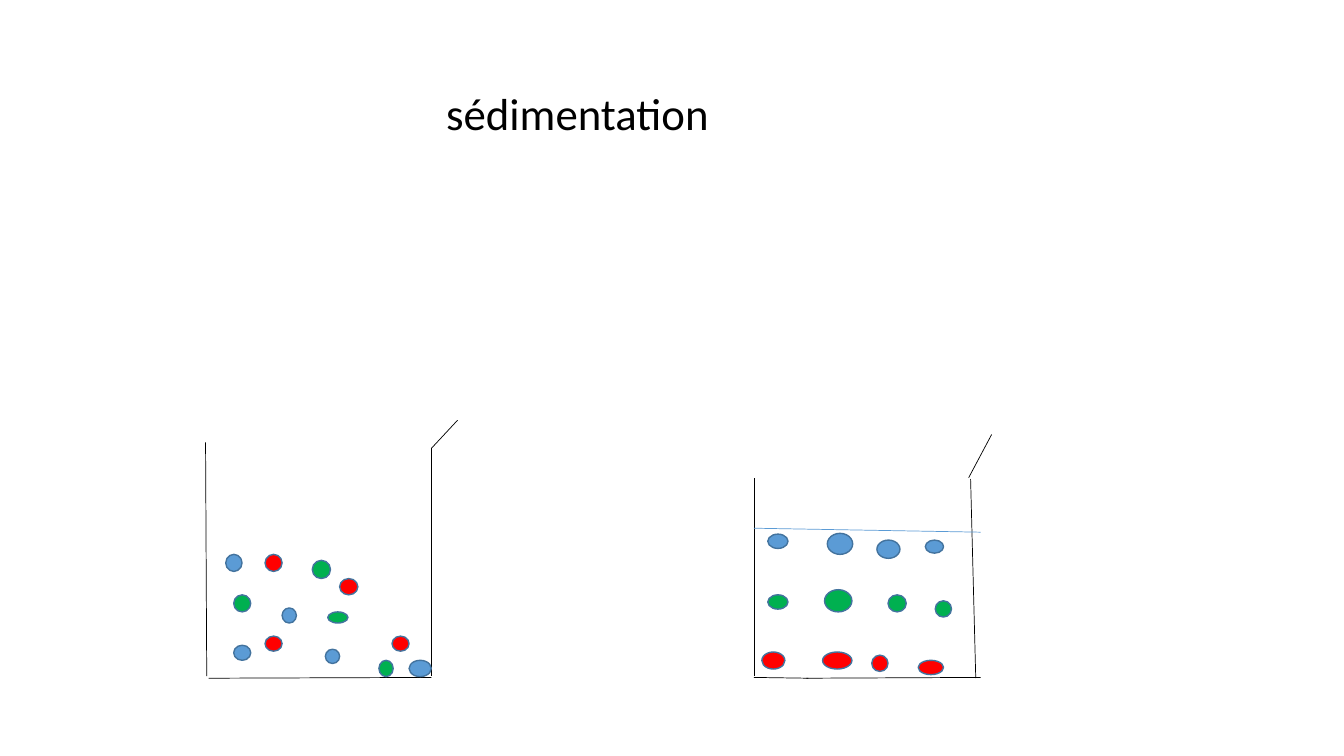
import dataclasses

import pptx
import pptx.dml.color
import pptx.enum.shapes
import pptx.enum.text
import pptx.oxml.ns
import pptx.presentation
import pptx.slide
import pptx.util
from lxml import etree

BLACK = pptx.dml.color.RGBColor(0x00, 0x00, 0x00)
BLUE = pptx.dml.color.RGBColor(0x5B, 0x9B, 0xD5)
RED = pptx.dml.color.RGBColor(0xFF, 0x00, 0x00)
GREEN = pptx.dml.color.RGBColor(0x00, 0xB0, 0x50)
OUTLINE = pptx.dml.color.RGBColor(0x43, 0x73, 0x9E)


@dataclasses.dataclass(frozen=True)
class Stroke:
    """A straight line, in centimetres."""
    start_x: float
    start_y: float
    end_x: float
    end_y: float
    color: pptx.dml.color.RGBColor = BLACK


@dataclasses.dataclass(frozen=True)
class Particle:
    """An ellipse, in centimetres."""
    left: float
    top: float
    width: float
    height: float
    color: pptx.dml.color.RGBColor


@dataclasses.dataclass(frozen=True)
class Beaker:
    strokes: list[Stroke]
    particles: list[Particle]


# Before settling: particles are mixed
MIXED_BEAKER = Beaker(
    strokes=[
        Stroke(11.53, 10.59, 10.87, 11.30),
        Stroke(10.87, 11.30, 10.87, 17.04),
        Stroke(10.87, 17.07, 5.26, 17.09),
        Stroke(5.21, 17.04, 5.18, 11.15),
    ],
    particles=[
        Particle(5.69, 13.97, 0.41, 0.43, BLUE),
        Particle(6.68, 13.97, 0.43, 0.43, RED),
        Particle(9.88, 16.03, 0.43, 0.38, RED),
        Particle(5.89, 14.99, 0.43, 0.43, GREEN),
        Particle(7.11, 15.32, 0.36, 0.38, BLUE),
        Particle(5.89, 16.26, 0.43, 0.38, BLUE),
        Particle(7.87, 14.12, 0.46, 0.46, GREEN),
        Particle(6.68, 16.03, 0.43, 0.38, RED),
        Particle(9.55, 16.64, 0.36, 0.41, GREEN),
        Particle(10.31, 16.64, 0.56, 0.41, BLUE),
        Particle(8.56, 14.58, 0.46, 0.41, RED),
        Particle(8.26, 15.42, 0.51, 0.28, GREEN),
        Particle(8.20, 16.36, 0.36, 0.36, BLUE),
    ],
)

# After settling: one layer per colour below the liquid surface
SETTLED_BEAKER = Beaker(
    strokes=[
        Stroke(24.99, 10.95, 24.41, 12.04),
        Stroke(24.46, 12.07, 24.59, 17.09),
        Stroke(24.71, 17.07, 20.32, 17.09),
        Stroke(20.37, 17.09, 19.00, 17.07),
        Stroke(19.00, 17.04, 19.00, 12.04),
        Stroke(19.00, 13.31, 24.71, 13.41, BLUE),
    ],
    particles=[
        Particle(19.35, 13.46, 0.51, 0.36, BLUE),
        Particle(20.85, 13.44, 0.64, 0.53, BLUE),
        Particle(22.10, 13.61, 0.58, 0.46, BLUE),
        Particle(23.32, 13.61, 0.46, 0.33, BLUE),
        Particle(19.35, 14.99, 0.51, 0.36, GREEN),
        Particle(20.78, 14.86, 0.69, 0.56, GREEN),
        Particle(22.38, 14.99, 0.46, 0.43, GREEN),
        Particle(23.57, 15.14, 0.41, 0.41, GREEN),
        Particle(19.20, 16.43, 0.58, 0.43, RED),
        Particle(20.73, 16.43, 0.74, 0.43, RED),
        Particle(21.97, 16.51, 0.41, 0.41, RED),
        Particle(23.14, 16.64, 0.64, 0.36, RED),
    ],
)


def draw_stroke(slide: pptx.slide.Slide, stroke: Stroke) -> None:
    connector = slide.shapes.add_connector(
        pptx.enum.shapes.MSO_CONNECTOR.STRAIGHT,
        pptx.util.Cm(stroke.start_x), pptx.util.Cm(stroke.start_y),
        pptx.util.Cm(stroke.end_x), pptx.util.Cm(stroke.end_y),
    )
    connector.line.color.rgb = stroke.color
    connector.line.width = pptx.util.Pt(0.5)
    properties = connector._element.spPr
    etree.SubElement(properties, pptx.oxml.ns.qn("a:effectLst"))


def draw_particle(slide: pptx.slide.Slide, particle: Particle) -> None:
    shape = slide.shapes.add_shape(
        pptx.enum.shapes.MSO_SHAPE.OVAL,
        pptx.util.Cm(particle.left), pptx.util.Cm(particle.top),
        pptx.util.Cm(particle.width), pptx.util.Cm(particle.height),
    )
    shape.shadow.inherit = False
    shape.fill.solid()
    shape.fill.fore_color.rgb = particle.color
    shape.line.color.rgb = OUTLINE
    shape.line.width = pptx.util.Pt(1)


def draw_beaker(slide: pptx.slide.Slide, beaker: Beaker) -> None:
    for stroke in beaker.strokes:
        draw_stroke(slide, stroke)
    for particle in beaker.particles:
        draw_particle(slide, particle)


def write_title(slide: pptx.slide.Slide, text: str) -> None:
    title = slide.shapes.title
    title.left, title.top = pptx.util.Cm(8.79), pptx.util.Cm(2.03)
    title.width, title.height = pptx.util.Cm(11.53), pptx.util.Cm(1.63)
    frame = title.text_frame
    frame.word_wrap = True
    frame.auto_size = pptx.enum.text.MSO_AUTO_SIZE.NONE
    frame.vertical_anchor = pptx.enum.text.MSO_ANCHOR.TOP
    paragraph = frame.paragraphs[0]
    paragraph.alignment = pptx.enum.text.PP_ALIGN.CENTER
    run = paragraph.add_run()
    run.text = text
    run.font.name = "Calibri"
    run.font.size = pptx.util.Pt(32)
    run.font.color.rgb = BLACK


def main() -> None:
    presentation = pptx.Presentation()
    presentation.slide_width = pptx.util.Cm(33.87)
    presentation.slide_height = pptx.util.Cm(19.05)
    title_only_layout = presentation.slide_layouts[5]
    slide = presentation.slides.add_slide(title_only_layout)

    write_title(slide, "sédimentation")
    for beaker in (MIXED_BEAKER, SETTLED_BEAKER):
        draw_beaker(slide, beaker)

    presentation.save("out.pptx")


if __name__ == "__main__":
    main()
